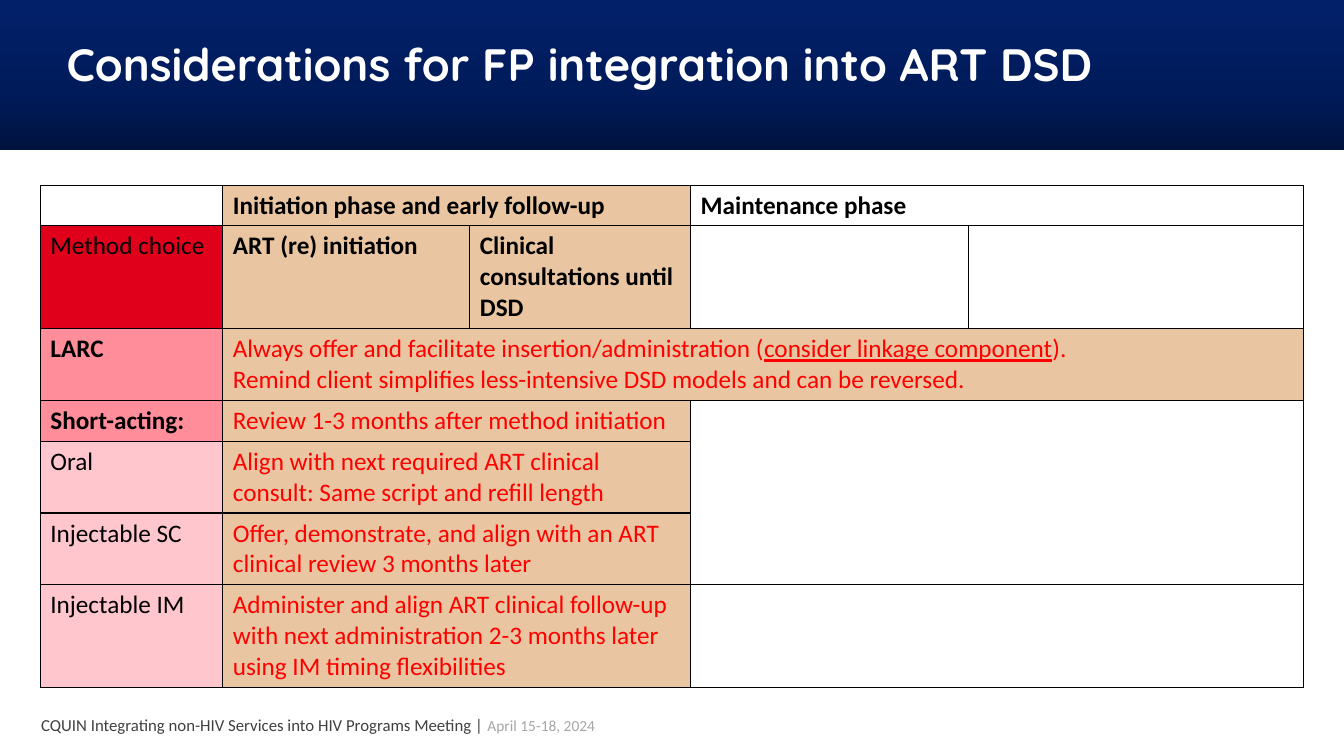
import pptx
import pptx.dml.color
import pptx.enum.shapes
import pptx.enum.text
import pptx.oxml
import pptx.oxml.ns
import pptx.util
from pptx.util import Inches

COLOURS = {
    "black": "000000",
    "white": "FFFFFF",
    "red_text": "FF0000",
    "tan": "E9C5A1",
    "crimson": "E0001B",
    "rose": "FF8D9A",
    "blush": "FFC6CD",
    "footer": "404040",
    "footer_date": "A6A6A6",
    "navy_dark": "00133F",
    "navy_mid": "001B5A",
    "navy": "022069",
}
COLUMN_WIDTHS = [1.81, 2.45, 2.19, 2.76, 3.32]
ROW_HEIGHTS = [0.4, 1.02, 0.71, 0.41, 0.71, 0.71, 1.02]
HEADING = {"bold": True}
ADVICE = {"colour": "red_text"}
CELLS = [
    (0, 1, 1, 2, "tan", [[("Initiation phase and early follow-up", HEADING)]]),
    (0, 3, 1, 2, "white", [[("Maintenance phase", HEADING)]]),
    (1, 0, 1, 1, "crimson", [[("Method choice", {})]]),
    (1, 1, 1, 1, "tan", [[("ART (re) initiation", HEADING)]]),
    (1, 2, 1, 1, "tan", [[("Clinical consultations until DSD", HEADING)]]),
    (2, 0, 1, 1, "rose", [[("LARC", HEADING)]]),
    (2, 1, 1, 4, "tan", [
        [("Always offer and facilitate insertion/administration (", ADVICE),
         ("consider linkage component", {"colour": "red_text", "underline": True}),
         (").", ADVICE)],
        [("Remind client simplifies less-intensive DSD models and can be reversed.", ADVICE)],
    ]),
    (3, 0, 1, 1, "rose", [[("Short-acting:", HEADING)]]),
    (3, 1, 1, 2, "tan", [[("Review 1-3 months after method initiation", ADVICE)]]),
    (3, 3, 3, 2, "white", []),
    (4, 0, 1, 1, "blush", [[("Oral", {})]]),
    (4, 1, 1, 2, "tan", [[("Align with next required ART clinical consult: Same script and refill length", ADVICE)]]),
    (5, 0, 1, 1, "blush", [[("Injectable SC", {})]]),
    (5, 1, 1, 2, "tan", [[("Offer, demonstrate, and align with an ART clinical review 3 months later", ADVICE)]]),
    (6, 0, 1, 1, "blush", [[("Injectable IM", {})]]),
    (6, 1, 1, 2, "tan", [[("Administer and align ART clinical follow-up with next administration 2-3 months later using IM timing flexibilities", ADVICE)]]),
    (6, 3, 1, 2, "white", []),
]


def rgb(name):
    return pptx.dml.color.RGBColor.from_string(COLOURS[name])


def add_text(paragraph, text, size=18, name="Calibri", colour="black", bold=False, underline=False):
    run = paragraph.add_run()
    run.text = text
    font = run.font
    font.size = pptx.util.Pt(size)
    font.name = name
    font.color.rgb = rgb(colour)
    font.bold = bold
    font.underline = underline


def place(shape, left, top, width, height):
    shape.left, shape.top = Inches(left), Inches(top)
    shape.width, shape.height = Inches(width), Inches(height)


def add_header_band(slide):
    band = slide.shapes.add_shape(
        pptx.enum.shapes.MSO_SHAPE.RECTANGLE, 0, 0, Inches(13.33), Inches(1.49))
    band.shadow.inherit = False
    band.line.fill.background()
    stops = "".join(
        f'<a:gs pos="{position * 1000}"><a:srgbClr val="{COLOURS[colour]}"/></a:gs>'
        for position, colour in [(0, "navy_dark"), (38, "navy_mid"), (100, "navy")])
    gradient = pptx.oxml.parse_xml(
        f'<a:gradFill {pptx.oxml.ns.nsdecls("a")}><a:gsLst>{stops}</a:gsLst>'
        '<a:lin ang="16200000" scaled="0"/></a:gradFill>')
    band.element.spPr.find(pptx.oxml.ns.qn("a:prstGeom")).addnext(gradient)
    slide.shapes._spTree.insert(2, band.element)


def set_title(slide, text):
    title = slide.shapes.title
    place(title, 0.56, 0.31, 12.23, 0.92)
    frame = title.text_frame
    frame.word_wrap = True
    frame.auto_size = pptx.enum.text.MSO_AUTO_SIZE.NONE
    frame.vertical_anchor = pptx.enum.text.MSO_ANCHOR.TOP
    paragraph = frame.paragraphs[0]
    paragraph.alignment = pptx.enum.text.PP_ALIGN.LEFT
    paragraph.line_spacing = 1.0
    add_text(paragraph, text, size=32.4, name="Quicksand", colour="white", bold=True)


def add_footer(slide):
    footer = slide.shapes.add_textbox(Inches(0.31), Inches(6.99), Inches(6.9), Inches(0.4))
    frame = footer.text_frame
    frame.word_wrap = True
    frame.vertical_anchor = pptx.enum.text.MSO_ANCHOR.MIDDLE
    paragraph = frame.paragraphs[0]
    add_text(paragraph, "CQUIN Integrating non-HIV Services into HIV Programs Meeting | ",
             size=12, colour="footer")
    add_text(paragraph, "April 15-18, 2024", size=11, colour="footer_date")


def style_cell(cell, fill):
    properties = cell._tc.get_or_add_tcPr()
    for index, side in enumerate(["lnL", "lnR", "lnT", "lnB"]):
        border = pptx.oxml.parse_xml(
            f'<a:{side} {pptx.oxml.ns.nsdecls("a")} w="12700"><a:solidFill>'
            f'<a:srgbClr val="{COLOURS["black"]}"/></a:solidFill></a:{side}>')
        properties.insert(index, border)
    cell.fill.solid()
    cell.fill.fore_color.rgb = rgb(fill)


def fill_cell(cell, fill, paragraphs):
    cell.fill.fore_color.rgb = rgb(fill)
    frame = cell.text_frame
    for index, runs in enumerate(paragraphs):
        paragraph = frame.add_paragraph() if index else frame.paragraphs[0]
        for text, style in runs:
            add_text(paragraph, text, **style)


def add_method_table(slide):
    table = slide.shapes.add_table(
        len(ROW_HEIGHTS), len(COLUMN_WIDTHS), Inches(0.4), Inches(1.84),
        Inches(sum(COLUMN_WIDTHS)), Inches(sum(ROW_HEIGHTS))).table
    table.first_row = False
    table.horz_banding = False
    for column, width in zip(table.columns, COLUMN_WIDTHS):
        column.width = Inches(width)
    for row, height in zip(table.rows, ROW_HEIGHTS):
        row.height = Inches(height)
    for cell in table.iter_cells():
        style_cell(cell, "white")
    for row, column, row_span, column_span, fill, paragraphs in CELLS:
        cell = table.cell(row, column)
        if row_span * column_span > 1:
            cell.merge(table.cell(row + row_span - 1, column + column_span - 1))
        fill_cell(cell, fill, paragraphs)


def main():
    presentation = pptx.Presentation()
    presentation.slide_width = Inches(13.33)
    presentation.slide_height = Inches(7.5)
    slide = presentation.slides.add_slide(presentation.slide_layouts[5])
    add_header_band(slide)
    set_title(slide, "Considerations for FP integration into ART DSD")
    add_footer(slide)
    add_method_table(slide)
    presentation.save("out.pptx")


if __name__ == "__main__":
    main()
